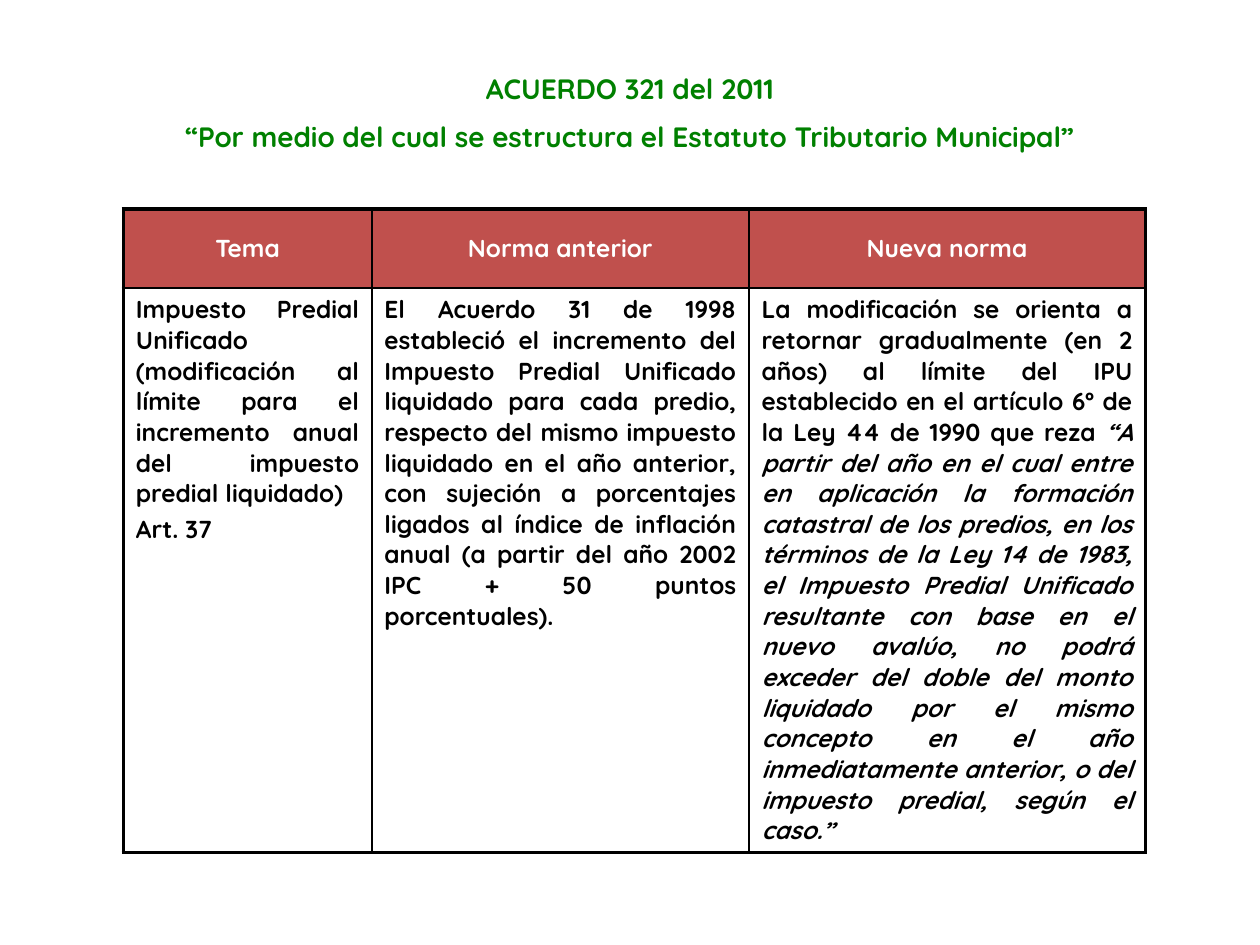
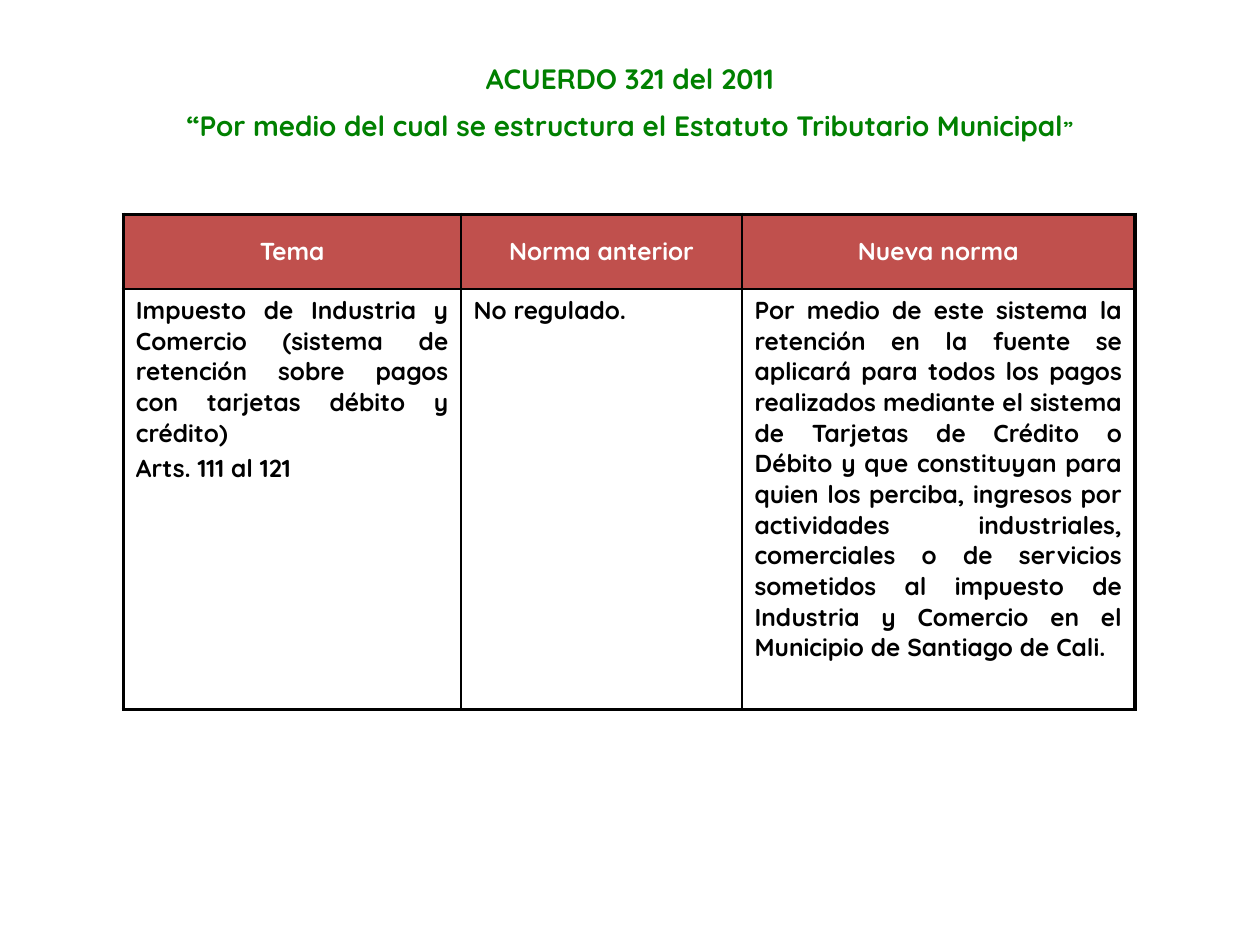
import pptx
import pptx.dml.color
import pptx.enum.text
import pptx.oxml.ns
import pptx.util
from lxml import etree

Pt = pptx.util.Pt
ALIGN = pptx.enum.text.PP_ALIGN
ANCHOR = pptx.enum.text.MSO_ANCHOR

COLORS = {"title": "008000", "header": "C0504D", "header_text": "FFFFFF",
          "text": "000000", "border": "000000"}
FONT = "Quicksand"
TITLE_SIZE, TABLE_SIZE = 16, 14
OUTER_LINE, INNER_LINE = 2.25, 1
TABLE_LEFT = 70.5
HEADERS = ["Tema", "Norma anterior", "Nueva norma"]
AGREEMENT = "ACUERDO 321 del 2011"
PURPOSE = "“Por medio del cual se estructura el Estatuto Tributario Municipal"


class Deck:
    """Holds the shared style and the current slide."""

    def __init__(self):
        self.presentation = pptx.Presentation()
        self.presentation.slide_width = Pt(720)
        self.presentation.slide_height = Pt(540)
        self.slide = None

    def add_slide(self):
        layout = self.presentation.slide_layouts.get_by_name("Title Only")
        self.slide = self.presentation.slides.add_slide(layout)

    def fill_text(self, text_frame, paragraphs, size, color, alignment, gap):
        """Each paragraph is a list of (text, font settings) runs."""
        for index, runs in enumerate(paragraphs):
            paragraph = text_frame.paragraphs[0] if index == 0 else text_frame.add_paragraph()
            paragraph.alignment = alignment
            paragraph.space_before = Pt(gap if index else 0)
            for text, settings in runs:
                run = paragraph.add_run()
                run.text = text
                run.font.name = FONT
                run.font.size = Pt(settings.get("size", size))
                run.font.bold = True
                run.font.italic = settings.get("italic", False)
                run.font.color.rgb = pptx.dml.color.RGBColor.from_string(COLORS[color])

    def title(self, top, closing_quote_size):
        title = self.slide.shapes.title
        title.left, title.top, title.width, title.height = Pt(0), Pt(top), Pt(720), Pt(55.5)
        text_frame = title.text_frame
        text_frame.auto_size = pptx.enum.text.MSO_AUTO_SIZE.NONE
        text_frame.vertical_anchor = ANCHOR.TOP
        lines = [[(AGREEMENT, {})], [(PURPOSE, {}), ("”", {"size": closing_quote_size})]]
        self.fill_text(text_frame, lines, TITLE_SIZE, "title", ALIGN.CENTER, TITLE_SIZE * 0.5)

    def borders(self, cell, widths):
        properties = cell._tc.get_or_add_tcPr()
        for side, width in widths.items():
            line = etree.SubElement(properties, pptx.oxml.ns.qn("a:ln" + side), w=str(Pt(width)))
            fill = etree.SubElement(line, pptx.oxml.ns.qn("a:solidFill"))
            etree.SubElement(fill, pptx.oxml.ns.qn("a:srgbClr"), val=COLORS["border"])

    def table(self, top, column_widths, row_heights, body):
        shape = self.slide.shapes.add_table(
            len(row_heights), len(column_widths), Pt(TABLE_LEFT), Pt(top),
            Pt(sum(column_widths)), Pt(sum(row_heights)))
        table = shape.table
        table.first_row = table.horz_banding = False
        for column, width in zip(table.columns, column_widths):
            column.width = Pt(width)
        for row, height in zip(table.rows, row_heights):
            row.height = Pt(height)

        contents = [[[[(header, {})]] for header in HEADERS], body]
        last_row, last_column = len(row_heights) - 1, len(column_widths) - 1
        for row, cells in enumerate(contents):
            for column, paragraphs in enumerate(cells):
                cell = table.cell(row, column)
                on_edge = {"L": column == 0, "R": column == last_column,
                           "T": row == 0, "B": row == last_row}
                self.borders(cell, {side: OUTER_LINE if edge else INNER_LINE
                                    for side, edge in on_edge.items()})
                if row == 0:
                    cell.fill.solid()
                    cell.fill.fore_color.rgb = pptx.dml.color.RGBColor.from_string(COLORS["header"])
                    cell.vertical_anchor = ANCHOR.MIDDLE
                    color, alignment = "header_text", ALIGN.CENTER
                else:
                    cell.fill.background()
                    cell.vertical_anchor = ANCHOR.TOP
                    color, alignment = "text", ALIGN.JUSTIFY
                self.fill_text(cell.text_frame, paragraphs, TABLE_SIZE, color, alignment,
                               TABLE_SIZE * 0.2)


def main():
    deck = Deck()

    # Property tax
    deck.add_slide()
    deck.title(37.5, TITLE_SIZE)
    deck.table(119.5, [142, 215.5, 226.5], [45, 322], [
        [[("Impuesto Predial Unificado (modificación al límite para el incremento anual "
           "del impuesto predial liquidado)", {})],
         [("Art. 37", {})]],
        [[("El Acuerdo 31 de 1998 estableció el incremento del Impuesto Predial Unificado "
           "liquidado para cada predio, respecto del mismo impuesto liquidado en el año "
           "anterior, con sujeción a porcentajes ligados al índice de inflación anual "
           "(a partir del año 2002 IPC + 50 puntos porcentuales).", {})]],
        [[("La modificación se orienta a retornar gradualmente (en 2 años) al límite del IPU "
           "establecido en el artículo 6º de la Ley 44 de 1990 que reza ", {}),
          ("“A partir del año en el cual entre en aplicación la formación catastral de los "
           "predios, en los términos de la Ley 14 de 1983, el Impuesto Predial Unificado "
           "resultante con base en el nuevo avalúo, no podrá exceder del doble del monto "
           "liquidado por el mismo concepto en el año inmediatamente anterior, o del "
           "impuesto predial, según el caso.”", {"italic": True})]],
    ])

    # Industry and commerce tax
    deck.add_slide()
    deck.title(31.5, 12)
    deck.table(122.5, [193, 160.5, 224.5], [42.5, 240.5], [
        [[("Impuesto de Industria y Comercio (sistema de retención sobre pagos con tarjetas "
           "débito y crédito)", {})],
         [("Arts. 111 al 121", {})]],
        [[("No regulado.", {})]],
        [[("Por medio de este sistema la retención en la fuente se aplicará para todos los "
           "pagos realizados mediante el sistema de Tarjetas de Crédito o Débito y que "
           "constituyan para quien los perciba, ingresos por actividades industriales, "
           "comerciales o de servicios sometidos al impuesto de Industria y Comercio en el "
           "Municipio de Santiago de Cali.", {})]],
    ])

    deck.presentation.save("out.pptx")


if __name__ == "__main__":
    main()
